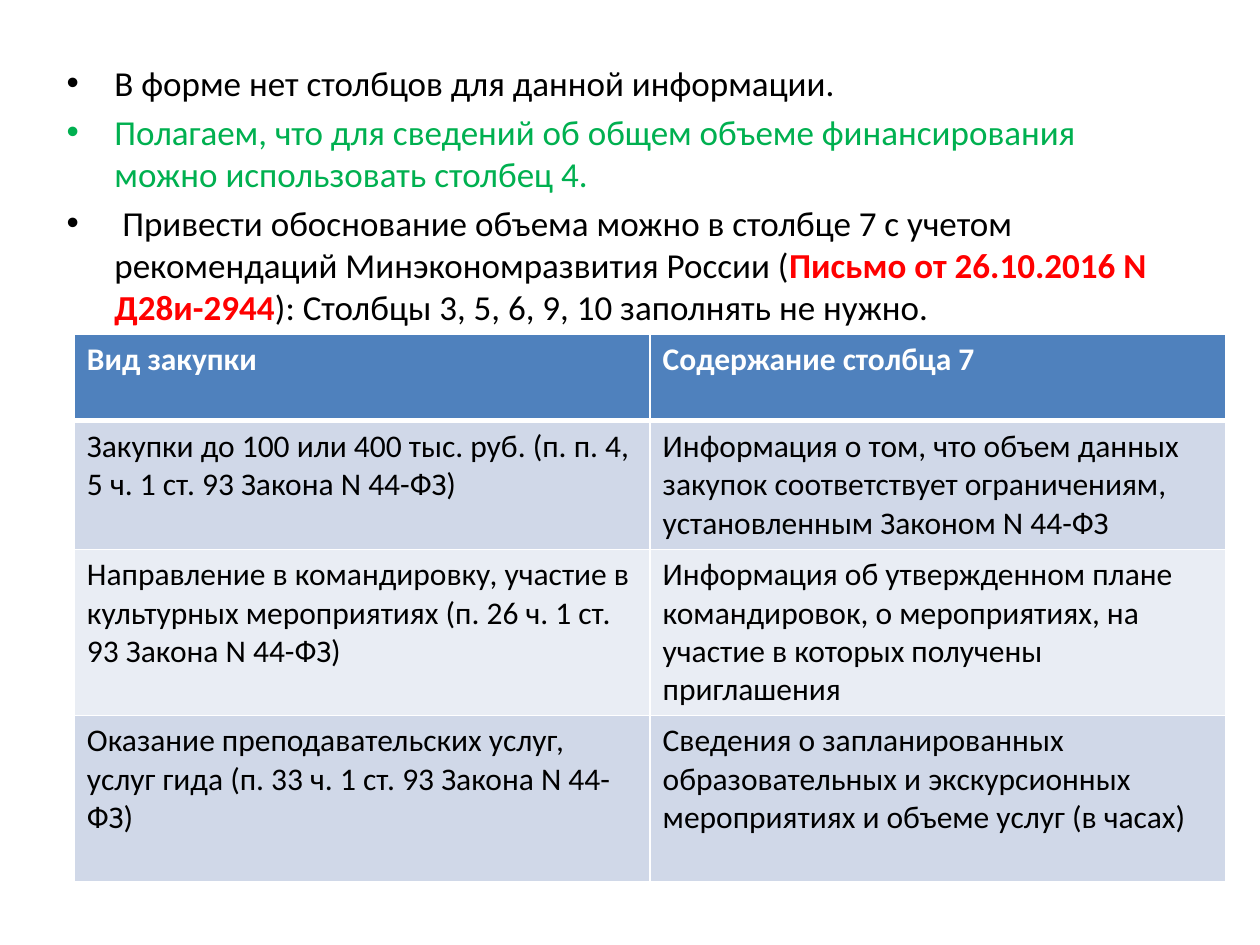
from lxml.etree import SubElement
from pptx import Presentation
from pptx.dml.color import RGBColor
from pptx.oxml.ns import qn
from pptx.util import Inches, Pt

FONT = "Calibri"
BLACK = RGBColor(0x00, 0x00, 0x00)
WHITE = RGBColor(0xFF, 0xFF, 0xFF)
GREEN = RGBColor(0x00, 0xB0, 0x50)
RED = RGBColor(0xFF, 0x00, 0x00)
HEADER_BLUE = RGBColor(0x4F, 0x81, 0xBD)
BAND_DARK = RGBColor(0xD0, 0xD8, 0xE8)
BAND_LIGHT = RGBColor(0xE9, 0xED, 0xF4)

# Each bullet is a list of runs: text, colour, bold
BULLETS = [
    [("В форме нет столбцов для данной информации.", BLACK, False)],
    [("Полагаем, что для сведений об общем объеме финансирования "
      "можно использовать столбец 4.", GREEN, False)],
    [(" Привести обоснование объема можно в столбце 7 с учетом "
      "рекомендаций Минэкономразвития России (", BLACK, False),
     ("Письмо от 26.10.2016 N Д28и-2944", RED, True),
     ("): Столбцы 3, 5, 6, 9, 10 заполнять не нужно.", BLACK, False)],
]

PURCHASES = [
    ("Вид закупки", "Содержание столбца 7"),
    ("Закупки до 100 или 400 тыс. руб. (п. п. 4, 5 ч. 1 ст. 93 Закона N 44-ФЗ)",
     "Информация о том, что объем данных закупок соответствует ограничениям, "
     "установленным Законом N 44-ФЗ"),
    ("Направление в командировку, участие в культурных мероприятиях "
     "(п. 26 ч. 1 ст. 93 Закона N 44-ФЗ)",
     "Информация об утвержденном плане командировок, о мероприятиях, "
     "на участие в которых получены приглашения"),
    ("Оказание преподавательских услуг, услуг гида "
     "(п. 33 ч. 1 ст. 93 Закона N 44-ФЗ)",
     "Сведения о запланированных образовательных и экскурсионных "
     "мероприятиях и объеме услуг (в часах)"),
]
ROW_HEIGHTS = [0.69, 1.02, 1.32, 1.32]
COLUMN_WIDTH = 4.57


def add_run(paragraph, text, size, color, bold=False):
    run = paragraph.add_run()
    run.text = text
    run.font.name = FONT
    run.font.size = Pt(size)
    run.font.bold = bold
    run.font.color.rgb = color


def set_bullet(paragraph, indent):
    """Give the paragraph a round bullet with a hanging indent."""
    properties = paragraph._p.get_or_add_pPr()
    properties.set("marL", str(indent))
    properties.set("indent", str(-indent))
    SubElement(properties, qn("a:buFont"), typeface="Arial")
    SubElement(properties, qn("a:buChar"), char="•")


def add_bullets(slide):
    box = slide.shapes.add_textbox(Inches(0.43), Inches(0.44), Inches(9.07), Inches(6.26))
    frame = box.text_frame
    frame.word_wrap = True
    for index, runs in enumerate(BULLETS):
        paragraph = frame.add_paragraph() if index else frame.paragraphs[0]
        paragraph.space_before = Pt(4)
        set_bullet(paragraph, Inches(0.38))
        for text, color, bold in runs:
            add_run(paragraph, text, 20, color, bold)


def set_borders(cell, color, widths):
    """Draw the cell's borders; widths maps a side (L, R, T, B) to points."""
    properties = cell._tc.get_or_add_tcPr()
    for position, (side, width) in enumerate(widths.items()):
        line = SubElement(properties, qn(f"a:ln{side}"), w=str(Pt(width)))
        fill = SubElement(line, qn("a:solidFill"))
        SubElement(fill, qn("a:srgbClr"), val=str(color))
        properties.insert(position, line)


def add_purchase_table(slide):
    frame = slide.shapes.add_table(
        len(PURCHASES), 2, Inches(0.59), Inches(2.65),
        Inches(2 * COLUMN_WIDTH), Inches(sum(ROW_HEIGHTS)))
    table = frame.table
    for column in table.columns:
        column.width = Inches(COLUMN_WIDTH)
    for row_index, texts in enumerate(PURCHASES):
        table.rows[row_index].height = Inches(ROW_HEIGHTS[row_index])
        header = row_index == 0
        band = BAND_DARK if row_index % 2 else BAND_LIGHT
        widths = {"L": 1, "R": 1, "T": 3 if row_index == 1 else 1, "B": 3 if header else 1}
        for column_index, text in enumerate(texts):
            cell = table.cell(row_index, column_index)
            cell.fill.solid()
            cell.fill.fore_color.rgb = HEADER_BLUE if header else band
            set_borders(cell, WHITE, widths)
            add_run(cell.text_frame.paragraphs[0], text, 18,
                    WHITE if header else BLACK, header)


def main():
    presentation = Presentation()
    presentation.slide_width = Inches(10)
    presentation.slide_height = Inches(7.5)
    slide = presentation.slides.add_slide(presentation.slide_layouts[6])
    add_bullets(slide)
    add_purchase_table(slide)
    presentation.save("out.pptx")


if __name__ == "__main__":
    main()
